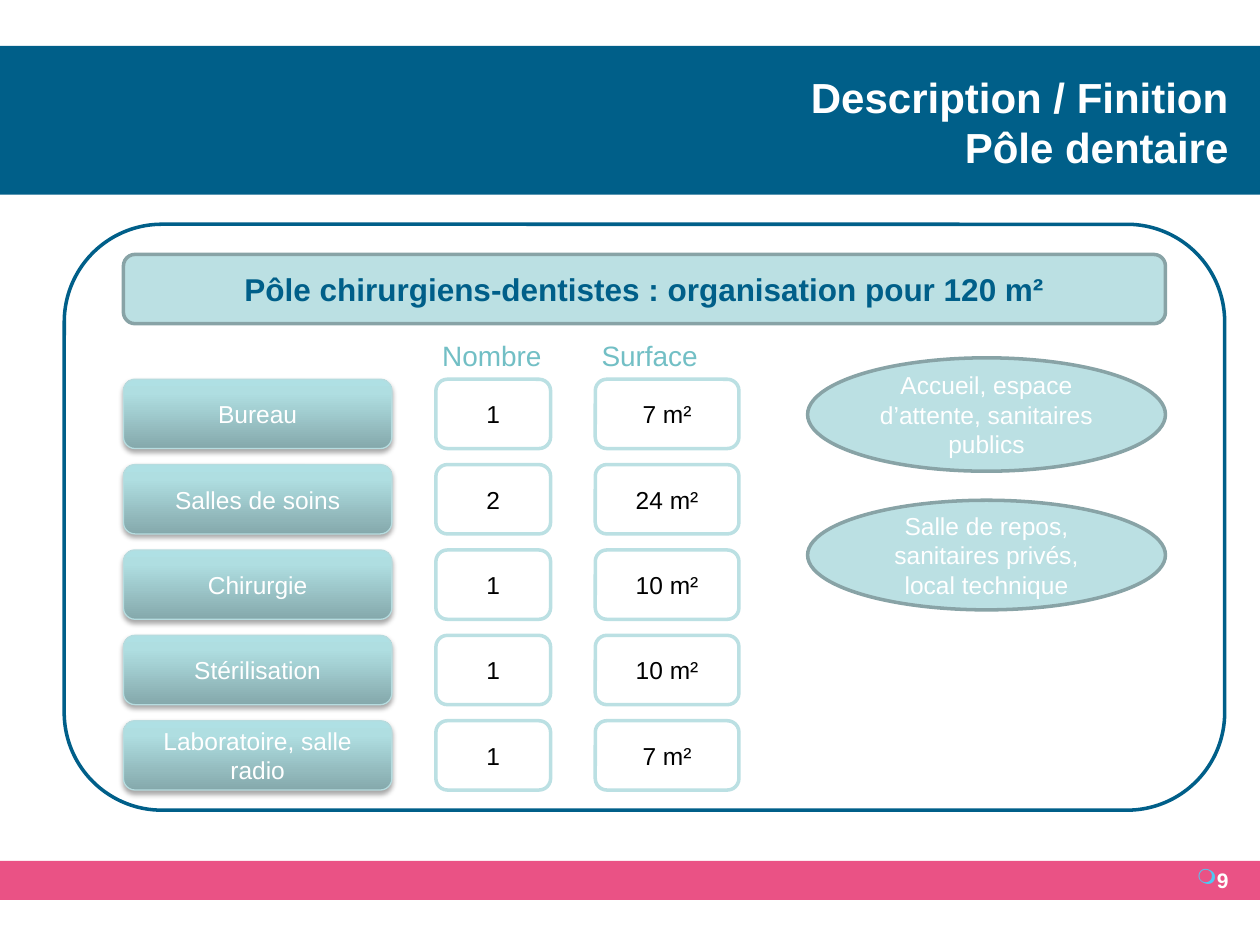
from dataclasses import dataclass

from lxml import etree
from pptx import Presentation
from pptx.dml.color import RGBColor
from pptx.enum.shapes import MSO_SHAPE
from pptx.enum.text import MSO_ANCHOR, PP_ALIGN
from pptx.oxml.ns import qn
from pptx.util import Inches, Pt

RECTANGLE = MSO_SHAPE.RECTANGLE
ROUNDED = MSO_SHAPE.ROUNDED_RECTANGLE
ELLIPSE = MSO_SHAPE.OVAL
LEFT, CENTER, RIGHT = PP_ALIGN.LEFT, PP_ALIGN.CENTER, PP_ALIGN.RIGHT
TOP, MIDDLE = MSO_ANCHOR.TOP, MSO_ANCHOR.MIDDLE

FONT = "Arial"
BLUE, PINK, WHITE, BLACK = "005F89", "EA5285", "FFFFFF", "000000"
PALE, GREY, TEAL, EDGE = "BBE0E3", "88A3A6", "72BFC5", "B6DCDF"
ROOM_GRADIENT = [(0, "85A9AC"), (80, "AFDEE1"), (100, "AFE0E4")]

ROOMS = [
    ("Bureau", "1", "7 m²"),
    ("Salles de soins", "2", "24 m²"),
    ("Chirurgie", "1", "10 m²"),
    ("Stérilisation", "1", "10 m²"),
    ("Laboratoire, salle radio", "1", "7 m²"),
]
SHARED_SPACES = [
    "Accueil, espace d’attente, sanitaires publics",
    "Salle de repos, sanitaires privés, local technique",
]


@dataclass
class Box:
    left: float
    top: float
    width: float
    height: float

    def share(self, left, top, width, height):
        return Box(
            self.left + self.width * left / 100,
            self.top + self.height * top / 100,
            self.width * width / 100,
            self.height * height / 100,
        )

    def place(self):
        return [Inches(v) for v in (self.left, self.top, self.width, self.height)]


def color(value):
    return RGBColor.from_string(value)


def child(parent, tag, **attributes):
    element = etree.SubElement(parent, qn(tag))
    for key, value in attributes.items():
        element.set(key, str(value))
    return element


def write(holder, text, size, ink, bold=False, align=CENTER, anchor=MIDDLE):
    frame = holder.text_frame
    frame.text = text
    frame.word_wrap = True
    frame.vertical_anchor = anchor
    frame.margin_left = frame.margin_right = Inches(0.05)
    frame.margin_top = frame.margin_bottom = Inches(0.05)
    for paragraph in frame.paragraphs:
        paragraph.alignment = align
        for run in paragraph.runs:
            run.font.name = FONT
            run.font.size = Pt(size)
            run.font.bold = bold
            run.font.color.rgb = color(ink)


def add_label(slide, box, *args, **style):
    label = slide.shapes.add_textbox(*box.place())
    write(label, *args, **style)
    return label


def add_block(slide, kind, box, fill=None, line=None, weight=2):
    block = slide.shapes.add_shape(kind, *box.place())
    block.shadow.inherit = False
    if fill:
        block.fill.solid()
        block.fill.fore_color.rgb = color(fill)
    else:
        block.fill.background()
    if line:
        block.line.color.rgb = color(line)
        block.line.width = Pt(weight)
    else:
        block.line.fill.background()
    return block


def shade(block):
    block.fill.gradient()
    block.fill.gradient_angle = 90
    properties = block._element.spPr
    stops = properties.find(".//" + qn("a:gsLst"))
    for stop in list(stops):
        stops.remove(stop)
    for position, value in ROOM_GRADIENT:
        stop = child(stops, "a:gs", pos=position * 1000)
        child(stop, "a:srgbClr", val=value)
    effects = properties.find(qn("a:effectLst"))
    shadow = child(effects, "a:outerShdw", blurRad=Pt(3), dist=Pt(1.8),
                   dir=90 * 60000, rotWithShape=0)
    child(child(shadow, "a:srgbClr", val=BLACK), "a:alpha", val=35000)


def add_title(slide, box):
    add_block(slide, RECTANGLE, box, BLUE)
    add_label(slide, box.share(25.9, 0.8, 72.1, 100),
              "Description / Finition\vPôle dentaire", 24, WHITE, bold=True, align=RIGHT)


def add_footer(slide, box):
    add_block(slide, RECTANGLE, box, PINK)
    number = add_label(slide, box.share(94.5, 0, 3.5, 93.5), "9", 12, WHITE,
                       bold=True, align=RIGHT, anchor=TOP)
    number.text_frame.word_wrap = False
    properties = number.text_frame.paragraphs[0]._p.get_or_add_pPr()
    child(child(properties, "a:buClr"), "a:srgbClr", val="4FC8F3")
    child(properties, "a:buChar", char="❍")


def add_heading(slide, box):
    heading = add_block(slide, ROUNDED, box, PALE, GREY)
    write(heading, "Pôle chirurgiens-dentistes : organisation pour 120 m²", 18, BLUE, bold=True)


def add_rooms(slide, box):
    columns = [(0, 43.65), (50.82, 18.65), (76.74, 23.36)]
    first, height = 10.19, 15.15
    pitch = (100 - first - height) / (len(ROOMS) - 1)
    for caption, (left, _) in zip(("Nombre", "Surface"), columns[1:]):
        add_label(slide, box.share(left, 0, 23.36, 9.37), caption, 16, TEAL,
                  align=LEFT, anchor=TOP)
    for row, room in enumerate(ROOMS):
        for column, (text, (left, width)) in enumerate(zip(room, columns)):
            cell = box.share(left, first + row * pitch, width, height)
            if column == 0:
                block = add_block(slide, ROUNDED, cell, PALE, EDGE, 0.75)
                shade(block)
                write(block, text, 14, WHITE)
            else:
                write(add_block(slide, ROUNDED, cell, WHITE, PALE), text, 14, BLACK)


def add_shared_spaces(slide, box):
    spans = [(0, 45), (56.5, 43.5)]
    for text, (top, height) in zip(SHARED_SPACES, spans):
        space = add_block(slide, ELLIPSE, box.share(0, top, 100, height), PALE, GREY)
        write(space, text, 14, WHITE)


def main():
    presentation = Presentation()
    presentation.slide_width = Inches(10)
    presentation.slide_height = Inches(7.5)
    slide = presentation.slides.add_slide(presentation.slide_layouts[6])
    page = Box(0, 0, 10, 7.5)
    add_title(slide, page.share(0, 4.85, 100, 15.75))
    add_footer(slide, page.share(0, 91.1, 100, 4.13))
    add_block(slide, ROUNDED, page.share(5.1, 23.73, 92.1, 62), line=BLUE)
    add_heading(slide, page.share(9.8, 26.93, 82.7, 7.33))
    add_rooms(slide, page.share(9.8, 35.2, 48.8, 48.4))
    add_shared_spaces(slide, page.share(64.1, 37.87, 28.4, 26.67))
    presentation.save("out.pptx")


if __name__ == "__main__":
    main()
